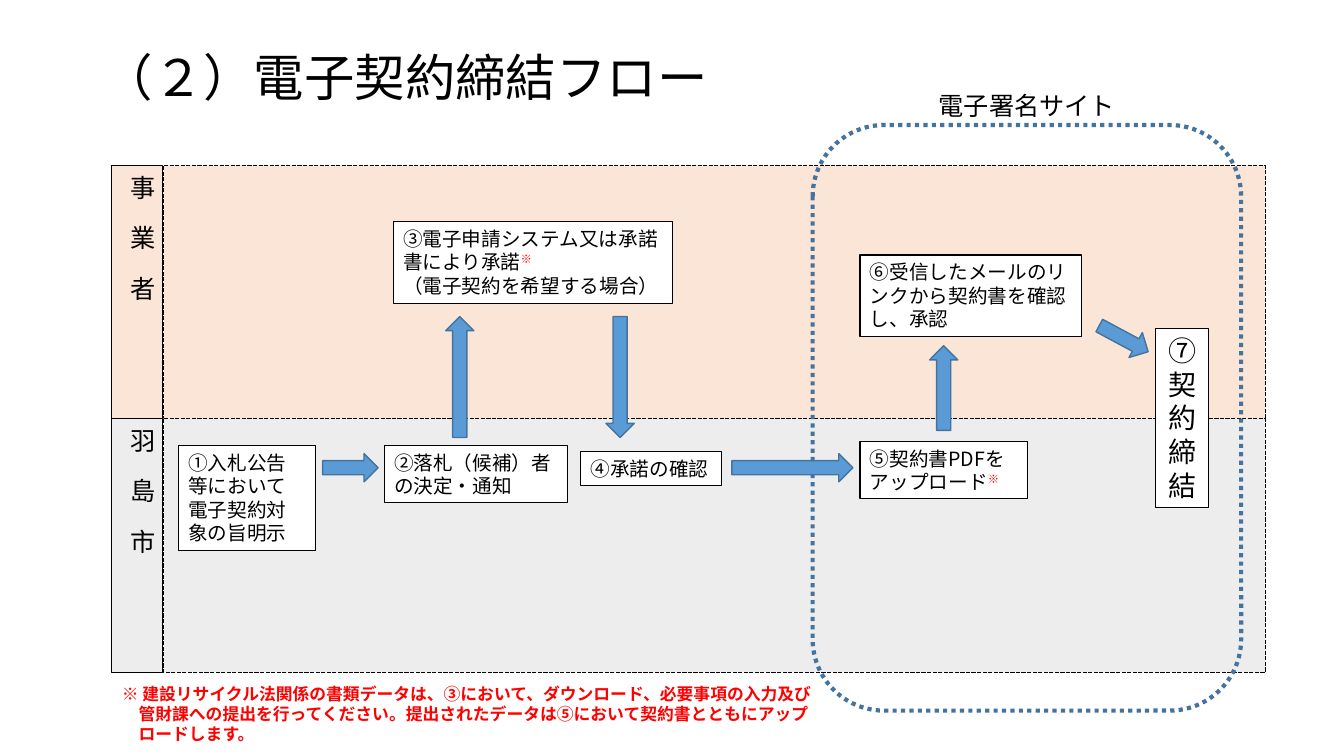
"""Build the slide showing the flow of concluding an electronic contract."""
from dataclasses import dataclass

from lxml import etree
from pptx import Presentation
from pptx.dml.color import RGBColor
from pptx.enum.dml import MSO_LINE
from pptx.enum.shapes import MSO_SHAPE
from pptx.enum.text import MSO_ANCHOR, MSO_AUTO_SIZE, PP_ALIGN
from pptx.oxml.ns import qn
from pptx.util import Pt

EMU_PER_PX = 9144
SLIDE_SIZE = (1333, 750)
RECTANGLE = MSO_SHAPE.RECTANGLE
ROUNDED = MSO_SHAPE.ROUNDED_RECTANGLE
RIGHT_ARROW = MSO_SHAPE.RIGHT_ARROW
DASHED = MSO_LINE.SQUARE_DOT
DOTTED = MSO_LINE.ROUND_DOT
LEFT, CENTER = PP_ALIGN.LEFT, PP_ALIGN.CENTER
MIDDLE = MSO_ANCHOR.MIDDLE
GROW = MSO_AUTO_SIZE.SHAPE_TO_FIT_TEXT

LANE_LEFT, LANE_TOP, LANE_HEIGHT = 111, 164, 252
LANE_PITCH = 251
HEADER_WIDTH, BODY_LEFT, BODY_WIDTH = 50, 162, 1093
ARROW_THICKNESS = 28


@dataclass(frozen=True)
class Theme:
    """Colours and type sizes of the slide."""
    font: str = "Noto Sans CJK JP"
    ink: str = "000000"
    paper: str = "FFFFFF"
    warning: str = "FF0000"
    arrow: str = "5B9BD5"
    outline: str = "43739E"
    business_lane: str = "FBE5D6"
    city_lane: str = "EDEDED"
    title_size: int = 36
    label_size: int = 18
    step_size: int = 14
    result_size: int = 20
    note_size: int = 12


THEME = Theme()

LANES = [
    ("事　業　者", THEME.business_lane),
    ("羽　島　市", THEME.city_lane),
]

STEPS = [
    ((177, 442, 136, 104), "①入札公告等において電子契約対象の旨明示"),
    ((381, 442, 182, 57), "②落札（候補）者の決定・通知"),
    ((390, 220, 277, 81),
     "③電子申請システム又は承諾書により承諾※\n（電子契約を希望する場合）"),
    ((576, 448, 140, 34), "④承諾の確認"),
    ((853, 438, 166, 57), "⑤契約書PDFをアップロード※"),
    ((853, 253, 220, 81), "⑥受信したメールのリンクから契約書を確認し、承認"),
]

ARROWS = [
    (320, 450, 55, 0),
    (726, 450, 120, 0),
    (396, 360, 120, 270),
    (555, 360, 120, 90),
    (894, 371, 84, 270),
    (1087, 322, 55, 28.2),
]

NOTE = (
    "※ 建設リサイクル法関係の書類データは、③において、ダウンロード、必要事項の入力及び\n"
    "　管財課への提出を行ってください。提出されたデータは⑤において契約書とともにアップ\n"
    "　ロードします。"
)


def px(*lengths):
    """Turn pixel lengths into EMU."""
    return [round(length * EMU_PER_PX) for length in lengths]


def format_run(run, size, color, bold=False):
    """Apply the theme font, a size and a colour to a run."""
    font = run.font
    font.name, font.size, font.bold = THEME.font, Pt(size), bold
    font.color.rgb = RGBColor.from_string(color)
    properties = run._r.get_or_add_rPr()
    etree.SubElement(properties, qn("a:ea"), typeface=THEME.font)


def add_reference_mark(paragraph):
    """Append the raised red mark that points to the note."""
    run = paragraph.add_run()
    run.text = "※"
    format_run(run, THEME.step_size, THEME.warning, True)
    run._r.get_or_add_rPr().set("baseline", "30000")


def paint(shape, fill, line, width, dash=None):
    """Set the fill and outline of a shape."""
    if fill:
        shape.fill.solid()
        shape.fill.fore_color.rgb = RGBColor.from_string(fill)
    else:
        shape.fill.background()
    shape.line.color.rgb = RGBColor.from_string(line)
    shape.line.width = Pt(width)
    if dash:
        shape.line.dash_style = dash


def add_text(slide, box, text, size, color=THEME.ink, align=LEFT, bold=False):
    """Add a wrapping text box that grows with its text."""
    shape = slide.shapes.add_textbox(*px(*box))
    frame = shape.text_frame
    frame.word_wrap = True
    frame.auto_size = GROW
    frame.text = text
    for paragraph in frame.paragraphs:
        paragraph.alignment = align
        for run in paragraph.runs:
            format_run(run, size, color, bold)
    return shape


def add_title(slide, text):
    """Add the slide title."""
    shape = add_text(slide, (92, 40, 1150, 79), text, THEME.title_size)
    shape.text_frame.auto_size = MSO_AUTO_SIZE.NONE
    shape.text_frame.vertical_anchor = MIDDLE
    shape.text_frame.paragraphs[0].line_spacing = 0.9


def add_shape(slide, kind, box, fill, line, width, dash=None):
    """Add a flat preset shape."""
    shape = slide.shapes.add_shape(kind, *px(*box))
    shape.shadow.inherit = False
    paint(shape, fill, line, width, dash)
    return shape


def add_lane_header(slide, top, name, color):
    """Add the vertical name of a lane."""
    box = (LANE_LEFT, top, HEADER_WIDTH, LANE_HEIGHT)
    shape = add_text(slide, box, name, THEME.label_size, align=CENTER)
    shape.text_frame._txBody.bodyPr.set("vert", "eaVert")
    paint(shape, color, THEME.ink, 0.75)


def add_lane_body(slide, top, color):
    """Add the dashed area of a lane."""
    box = (BODY_LEFT, top, BODY_WIDTH, LANE_HEIGHT)
    add_shape(slide, RECTANGLE, box, color, THEME.ink, 1, DASHED)


def add_step(slide, box, text):
    """Add a step box, raising the reference mark when it has one."""
    shape = add_text(slide, box, text.replace("※", ""), THEME.step_size)
    paint(shape, THEME.paper, THEME.ink, 0.75)
    for paragraph, line in zip(shape.text_frame.paragraphs, text.split("\n")):
        if line.endswith("※"):
            add_reference_mark(paragraph)


def add_arrow(slide, left, top, length, rotation):
    """Add a block arrow turned by the given degrees."""
    box = (left, top, length, ARROW_THICKNESS)
    arrow = add_shape(slide, RIGHT_ARROW, box, THEME.arrow, THEME.outline, 1)
    arrow.rotation = rotation


def main():
    """Build and save the presentation."""
    presentation = Presentation()
    presentation.slide_width, presentation.slide_height = px(*SLIDE_SIZE)
    slide = presentation.slides.add_slide(presentation.slide_layouts[6])
    add_title(slide, "（２）電子契約締結フロー")
    for index, (name, color) in enumerate(LANES):
        top = LANE_TOP + index * LANE_PITCH
        add_lane_header(slide, top, name, color)
        add_lane_body(slide, top, color)
    add_shape(slide, ROUNDED, (806, 124, 425, 581), None, THEME.outline, 3, DOTTED)
    add_text(slide, (904, 85, 229, 40), "電子署名サイト", THEME.label_size, align=CENTER)
    for box, text in STEPS:
        add_step(slide, box, text)
    result = add_text(slide, (1146, 326, 53, 178), "⑦\n契\n約\n締\n結",
                      THEME.result_size, align=CENTER)
    paint(result, THEME.paper, THEME.ink, 0.75)
    for arrow in ARROWS:
        add_arrow(slide, *arrow)
    add_text(slide, (111, 673, 726, 71), NOTE, THEME.note_size, THEME.warning, bold=True)
    presentation.save("out.pptx")


if __name__ == "__main__":
    main()
